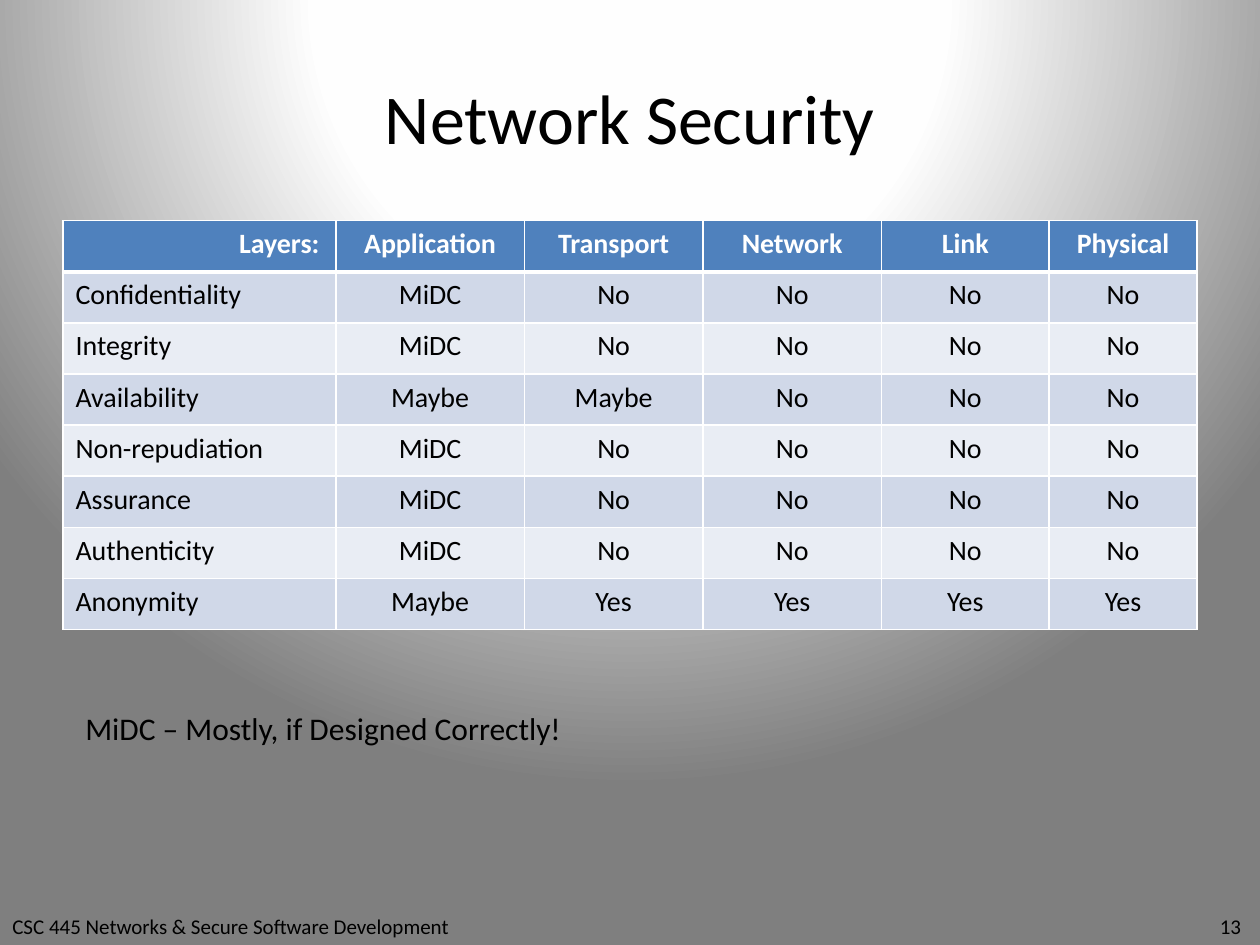
from lxml import etree
from pptx import Presentation
from pptx.dml.color import RGBColor
from pptx.enum.text import MSO_ANCHOR, PP_ALIGN
from pptx.oxml import parse_xml
from pptx.oxml.ns import nsdecls, qn
from pptx.util import Cm, Pt

LEFT, MID, RIGHT = PP_ALIGN.LEFT, PP_ALIGN.CENTER, PP_ALIGN.RIGHT
TOP, CENTER = MSO_ANCHOR.TOP, MSO_ANCHOR.MIDDLE

HUES = {
    "text": "000000",
    "white": "FFFFFF",
    "glow": "FEFEFE",
    "edge": "7F7F7F",
    "head": "4F81BD",
    "dark": "D0D8E8",
    "light": "E9EDF4",
}


def write(frame, text, size=16, hue="text", bold=False, align=LEFT, anchor=TOP, wrap=True):
    """Put one formatted paragraph in a text frame and return it."""
    frame.word_wrap = wrap
    frame.vertical_anchor = anchor
    para = frame.paragraphs[0]
    para.alignment = align
    run = para.add_run()
    run.text = text
    run.font.name = "Calibri"
    run.font.size = Pt(size)
    run.font.bold = bold
    run.font.color.rgb = RGBColor.from_string(HUES[hue])
    return para


def edge(cell, side, width):
    """Add a white border to one side (L, R, T or B) of a cell."""
    line = etree.SubElement(cell._tc.get_or_add_tcPr(), qn(f"a:ln{side}"), w=str(Pt(width)))
    fill = etree.SubElement(line, qn("a:solidFill"))
    etree.SubElement(fill, qn("a:srgbClr"), val=HUES["white"])


deck = Presentation()
deck.slide_width, deck.slide_height = Cm(25.4), Cm(19.05)
slide = deck.slides.add_slide(deck.slide_layouts[6])

# Radial background, centred above the slide
stops = "".join(
    f'<a:gs pos="{pos * 1000}"><a:srgbClr val="{HUES[hue]}"/></a:gs>'
    for pos, hue in ((0, "white"), (40, "glow"), (100, "edge"))
)
slide.element.cSld.insert(0, parse_xml(
    f'<p:bg {nsdecls("p", "a")}><p:bgPr><a:gradFill rotWithShape="1">'
    f'<a:gsLst>{stops}</a:gsLst><a:path path="circle">'
    '<a:fillToRect l="50000" t="-80000" r="50000" b="180000"/></a:path>'
    '</a:gradFill><a:effectLst/></p:bgPr></p:bg>'
))

# Footer, with the page number at a right tab
box = slide.shapes.add_textbox(0, Cm(18.29), Cm(25.4), Cm(0.76))
foot = write(box.text_frame, "CSC 445 Networks & Secure Software Development\t13", size=12)
tabs = etree.SubElement(foot._p.get_or_add_pPr(), qn("a:tabLst"))
etree.SubElement(tabs, qn("a:tab"), pos=str(Cm(24.77)), algn="r")

box = slide.shapes.add_textbox(Cm(1.27), Cm(0.76), Cm(22.86), Cm(3.18))
write(box.text_frame, "Network Security", size=40, align=MID, anchor=CENTER)

# Security goals by network layer
ROWS = [
    ["Layers:", "Application", "Transport", "Network", "Link", "Physical"],
    ["Confidentiality", "MiDC"] + ["No"] * 4,
    ["Integrity", "MiDC"] + ["No"] * 4,
    ["Availability", "Maybe", "Maybe"] + ["No"] * 3,
    ["Non-repudiation", "MiDC"] + ["No"] * 4,
    ["Assurance", "MiDC"] + ["No"] * 4,
    ["Authenticity", "MiDC"] + ["No"] * 4,
    ["Anonymity", "Maybe"] + ["Yes"] * 4,
]
WIDTHS = [5.5, 3.8, 3.6, 3.6, 3.38, 2.98]
HIGH = 1.03

table = slide.shapes.add_table(
    len(ROWS), len(WIDTHS), Cm(1.27), Cm(4.45), Cm(sum(WIDTHS)), Cm(HIGH * len(ROWS))
).table
for col, width in zip(table.columns, WIDTHS):
    col.width = Cm(width)

for r, row in enumerate(ROWS):
    table.rows[r].height = Cm(HIGH)
    head = r == 0
    band = "head" if head else "dark" if r % 2 else "light"
    for c, text in enumerate(row):
        cell = table.cell(r, c)
        for side in "LRTB":
            thick = (head and side == "B") or (r == 1 and side == "T")
            edge(cell, side, 3 if thick else 1)
        cell.fill.solid()
        cell.fill.fore_color.rgb = RGBColor.from_string(HUES[band])
        align = MID if c else RIGHT if head else LEFT
        write(cell.text_frame, text, hue="white" if head else "text", bold=head, align=align)
table.cell(0, 0).margin_right = Cm(0.33)

# Key to the short form
box = slide.shapes.add_textbox(Cm(1.47), Cm(14.17), Cm(10.21), Cm(1.02))
write(box.text_frame, "MiDC – Mostly, if Designed Correctly!", size=18, wrap=False)

deck.save("out.pptx")
